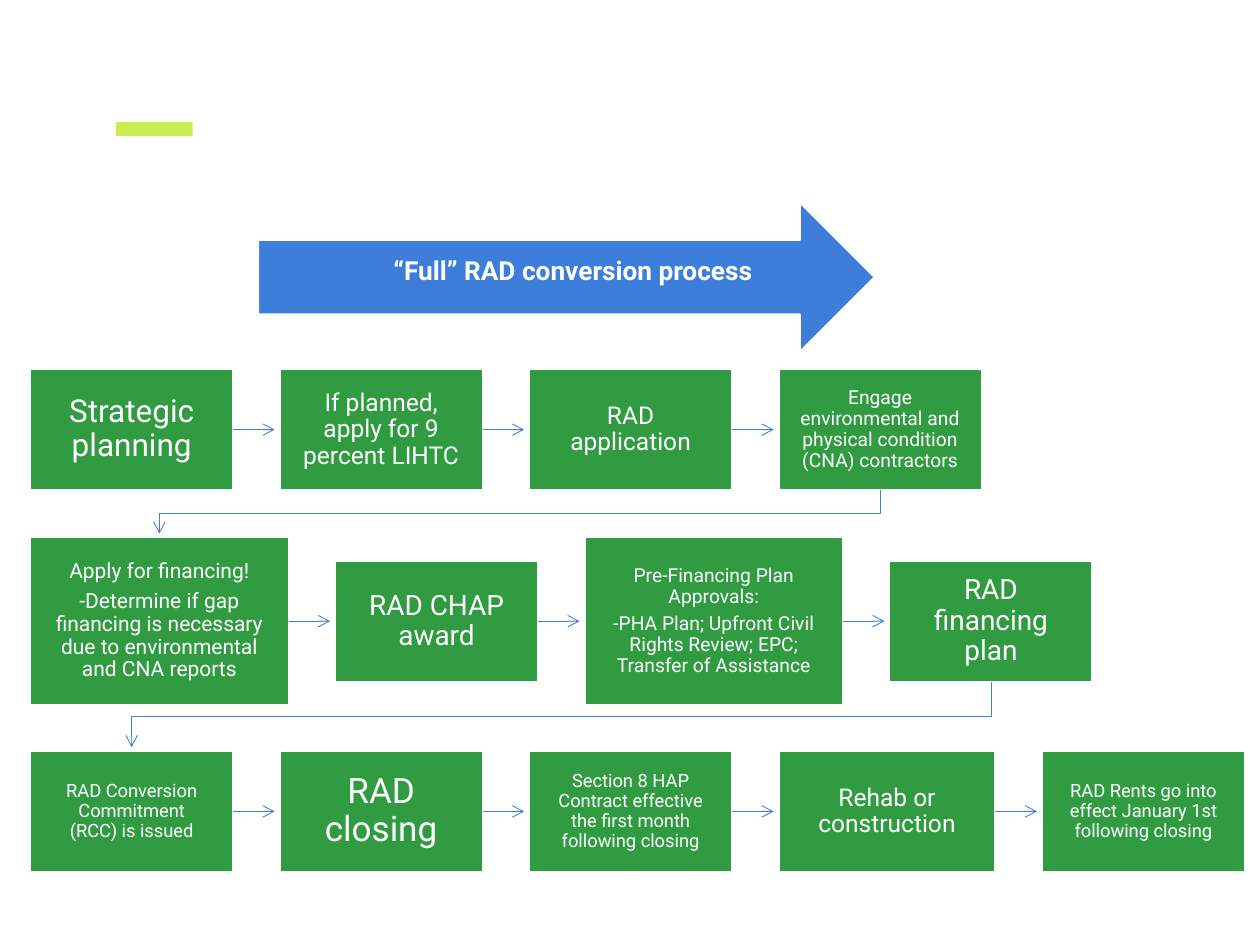
from dataclasses import dataclass

from lxml.etree import SubElement
from pptx import Presentation
from pptx.dml.color import RGBColor
from pptx.enum.shapes import MSO_CONNECTOR, MSO_SHAPE
from pptx.enum.text import MSO_ANCHOR, PP_ALIGN
from pptx.oxml.ns import qn
from pptx.shapes.autoshape import Shape
from pptx.shapes.connector import Connector
from pptx.slide import Slide
from pptx.util import Inches, Pt

WHITE = RGBColor(0xFF, 0xFF, 0xFF)
GREEN = RGBColor(0x31, 0x9B, 0x42)
BLUE = RGBColor(0x3D, 0x7E, 0xDB)
LIME = RGBColor(0xC9, 0xEC, 0x51)

ROW_LEFT = 0.24
STEP_GAP = 0.37
ARROW_LENGTH = 0.33
ARROW_CLEARANCE = 0.03


@dataclass
class Step:
    paragraphs: list[str]
    size: float
    width: float = 1.61
    height: float = 0.96
    inset: float = 0.22


@dataclass
class Row:
    middle: float
    steps: list[Step]


ROWS = [
    Row(3.41, [
        Step(["Strategic planning"], 18),
        Step(["If planned, apply for 9 percent LIHTC"], 14, inset=0.11),
        Step(["RAD application"], 14),
        Step(["Engage environmental and physical condition (CNA) contractors"],
             11, inset=0.09),
    ]),
    Row(4.93, [
        Step(["Apply for financing!",
              "-Determine if gap financing is necessary due to environmental "
              "and CNA reports"], 12, 2.05, 1.33, 0.09),
        Step(["RAD CHAP award"], 16),
        Step(["Pre-Financing Plan Approvals:",
              "-PHA Plan; Upfront Civil Rights Review; EPC; "
              "Transfer of Assistance"], 11, 2.05, 1.33, 0.09),
        Step(["RAD financing plan"], 16),
    ]),
    Row(6.44, [
        Step(["RAD Conversion Commitment (RCC) is issued"], 10.5),
        Step(["RAD closing"], 20),
        Step(["Section 8 HAP Contract effective the first month "
              "following closing"], 10.5),
        Step(["Rehab or construction"], 14, width=1.72),
        Step(["RAD Rents go into effect January 1st following closing"], 10.5),
    ]),
]


def add_filled_shape(slide: Slide, kind: MSO_SHAPE, left: float, top: float,
                     width: float, height: float, color: RGBColor) -> Shape:
    shape = slide.shapes.add_shape(
        kind, Inches(left), Inches(top), Inches(width), Inches(height))
    shape.shadow.inherit = False
    shape.fill.solid()
    shape.fill.fore_color.rgb = color
    shape.line.color.rgb = WHITE
    shape.line.width = Pt(1)
    return shape


def write_text(shape: Shape, paragraphs: list[str], size: float,
               insets: tuple[float, float, float, float],
               bold: bool = False) -> None:
    """Fill the shape with centred white text; insets run left, top, right, bottom."""
    frame = shape.text_frame
    frame.word_wrap = True
    frame.vertical_anchor = MSO_ANCHOR.MIDDLE
    for side, inset in zip(("left", "top", "right", "bottom"), insets):
        setattr(frame, f"margin_{side}", Inches(inset))
    para_format = {"alignment": PP_ALIGN.CENTER, "line_spacing": 0.9,
                   "space_after": Pt(size * 0.35)}
    font_format = {"name": "Roboto", "size": Pt(size), "bold": bold}
    for index, text in enumerate(paragraphs):
        para = frame.add_paragraph() if index else frame.paragraphs[0]
        for name, value in para_format.items():
            setattr(para, name, value)
        span = para.add_run()
        span.text = text
        for name, value in font_format.items():
            setattr(span.font, name, value)
        span.font.color.rgb = WHITE


def style_arrow(arrow: Shape | Connector) -> None:
    arrow.line.color.rgb = BLUE
    arrow.line.width = Pt(0.5)
    SubElement(arrow.line._get_or_add_ln(), qn("a:tailEnd"), type="arrow")


def add_step_arrow(slide: Slide, box: Shape) -> None:
    """Point from the right side of a step towards the next one."""
    start = box.left + box.width
    middle = box.top + box.height // 2
    arrow = slide.shapes.add_connector(
        MSO_CONNECTOR.STRAIGHT, start, middle,
        start + Inches(ARROW_LENGTH), middle)
    arrow.begin_connect(box, 3)
    style_arrow(arrow)
    SubElement(arrow._element.spPr, qn("a:effectLst"))


def add_row_arrow(slide: Slide, last: Shape, following: Shape) -> None:
    """Lead from the end of one row down and back to the start of the next."""
    start_x = last.left + last.width // 2
    end_x = following.left + following.width // 2
    bottom = last.top + last.height
    bend = (bottom + following.top) // 2
    builder = slide.shapes.build_freeform(start_x, bottom)
    builder.add_line_segments(
        [(start_x, bend), (end_x, bend),
         (end_x, following.top - Inches(ARROW_CLEARANCE))], close=False)
    arrow = builder.convert_to_shape()
    arrow.shadow.inherit = False
    arrow.fill.background()
    style_arrow(arrow)


def add_row(slide: Slide, row: Row) -> list[Shape]:
    boxes = []
    left = ROW_LEFT
    for step in row.steps:
        box = add_filled_shape(slide, MSO_SHAPE.RECTANGLE, left,
                               row.middle - step.height / 2,
                               step.width, step.height, GREEN)
        write_text(box, step.paragraphs, step.size, (step.inset,) * 4)
        boxes.append(box)
        left += step.width + STEP_GAP
    for box in boxes[:-1]:
        add_step_arrow(slide, box)
    return boxes


def main() -> None:
    deck = Presentation()
    deck.slide_width, deck.slide_height = Inches(10), Inches(7.5)
    page = deck.slides.add_slide(deck.slide_layouts[6])

    accent = add_filled_shape(page, MSO_SHAPE.RECTANGLE,
                              0.92, 0.97, 0.61, 0.11, LIME)
    accent.line.fill.background()
    banner = add_filled_shape(page, MSO_SHAPE.RIGHT_ARROW,
                              2.05, 1.61, 4.89, 1.18, BLUE)
    write_text(banner, ["“Full” RAD conversion process"], 15,
               (0.4, 0, 0, 0.08), bold=True)

    rows = [add_row(page, row) for row in ROWS]
    for current, following in zip(rows, rows[1:]):
        add_row_arrow(page, current[-1], following[0])

    deck.save("out.pptx")


if __name__ == "__main__":
    main()
